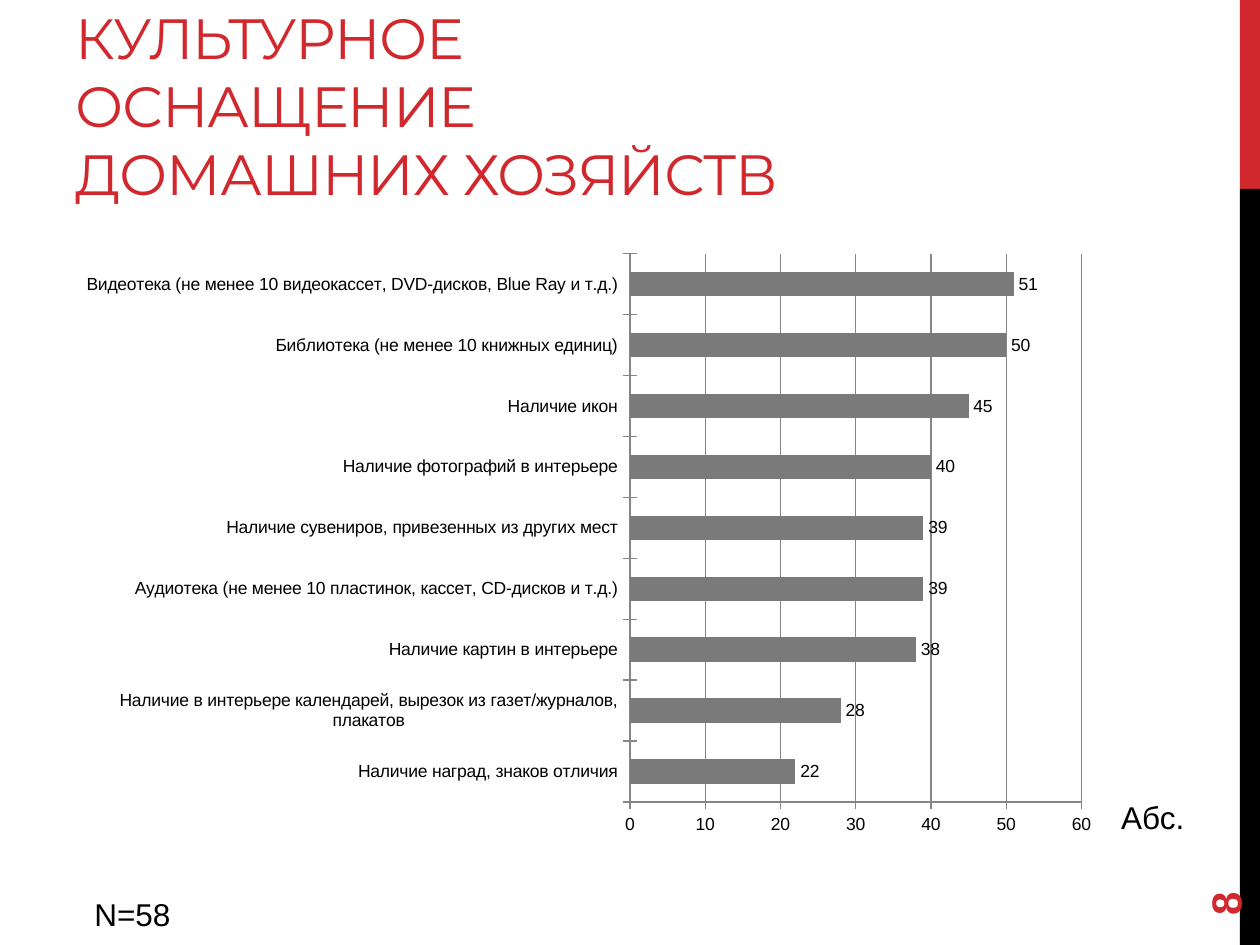
import dataclasses

import lxml.etree
import pptx
import pptx.chart.data
import pptx.dml.color
import pptx.enum.chart
import pptx.enum.shapes
import pptx.enum.text
import pptx.oxml.ns
import pptx.util

Pt = pptx.util.Pt
RGBColor = pptx.dml.color.RGBColor
Anchor = pptx.enum.text.MSO_ANCHOR

RED = RGBColor(0xD1, 0x28, 0x2E)
BLACK = RGBColor(0, 0, 0)
BAR_GRAY = RGBColor(0x7A, 0x7A, 0x7A)
LINE_GRAY = RGBColor(0x86, 0x86, 0x86)

HOUSEHOLD_ITEMS = {
    "Наличие наград, знаков отличия": 22,
    "Наличие в интерьере календарей, вырезок из газет/журналов, плакатов": 28,
    "Наличие картин в интерьере": 38,
    "Аудиотека (не менее 10 пластинок, кассет, CD-дисков и т.д.)": 39,
    "Наличие сувениров, привезенных из других мест": 39,
    "Наличие фотографий в интерьере": 40,
    "Наличие икон": 45,
    "Библиотека (не менее 10 книжных единиц)": 50,
    "Видеотека (не менее 10 видеокассет, DVD-дисков, Blue Ray и т.д.)": 51,
}
# Inner plot area as fractions of the chart frame
PLOT_LAYOUT = {"x": 0.54, "y": 0.02, "w": 0.43, "h": 0.91}


@dataclasses.dataclass
class Band:
    top: float
    height: float
    color: RGBColor


@dataclasses.dataclass
class Label:
    text: str
    left: float
    top: float
    width: float
    size: float = 18
    color: RGBColor = BLACK
    bold: bool = False
    rotation: float = 0
    wrap: bool = False
    anchor: Anchor = Anchor.TOP


BANDS = [Band(0, 108, RED), Band(108, 432, BLACK)]
LABELS = [
    Label("8", 648, 463.7, 103.7, size=24, color=RED, bold=True,
          rotation=270, wrap=True, anchor=Anchor.MIDDLE),
    Label("N=58", 46.8, 507.6, 58.3),
    Label("Абс.", 633.6, 452.2, 51.8),
]


def apply_format(target, values: dict) -> None:
    for name, value in values.items():
        setattr(target, name, value)


def apply_font(font, color: RGBColor, **values) -> None:
    apply_format(font, values)
    font.color.rgb = color


def add_band(page, band: Band) -> None:
    shape = page.shapes.add_shape(
        pptx.enum.shapes.MSO_SHAPE.RECTANGLE,
        Pt(708.5), Pt(band.top), Pt(11.5), Pt(band.height))
    shape.shadow.inherit = False
    shape.fill.solid()
    shape.fill.fore_color.rgb = band.color
    shape.line.fill.background()


def add_label(page, label: Label) -> None:
    box = page.shapes.add_textbox(
        Pt(label.left), Pt(label.top), Pt(label.width), Pt(29))
    box.rotation = label.rotation
    apply_format(box.text_frame, {
        "word_wrap": label.wrap, "vertical_anchor": label.anchor})
    span = box.text_frame.paragraphs[0].add_run()
    span.text = label.text
    apply_font(span.font, label.color, name="Arial",
               size=Pt(label.size), bold=label.bold)


def format_title(page, text: str) -> None:
    title = page.shapes.title
    apply_format(title, {"left": Pt(36), "top": Pt(12.2),
                         "width": Pt(455.8), "height": Pt(108)})
    apply_format(title.text_frame, {
        "word_wrap": True, "vertical_anchor": Anchor.BOTTOM,
        "auto_size": pptx.enum.text.MSO_AUTO_SIZE.NONE,
        "margin_bottom": Pt(2)})
    para = title.text_frame.paragraphs[0]
    para.alignment = pptx.enum.text.PP_ALIGN.LEFT
    span = para.add_run()
    span.text = text
    apply_font(span.font, RED, name="Montserrat", size=Pt(32.4))
    span.font._element.set("spc", "-60")


def set_plot_layout(chart) -> None:
    plot_area = chart._chartSpace.chart.plotArea
    for old in plot_area.findall(pptx.oxml.ns.qn("c:layout")):
        plot_area.remove(old)
    layout = lxml.etree.Element(pptx.oxml.ns.qn("c:layout"))
    manual = lxml.etree.SubElement(layout, pptx.oxml.ns.qn("c:manualLayout"))
    settings = {"layoutTarget": "inner", "xMode": "edge", "yMode": "edge",
                **PLOT_LAYOUT}
    for name, value in settings.items():
        item = lxml.etree.SubElement(manual, pptx.oxml.ns.qn(f"c:{name}"))
        item.set("val", str(value))
    plot_area.insert(0, layout)


def format_line(line) -> None:
    line.color.rgb = LINE_GRAY
    line.width = Pt(0.75)


def add_household_chart(page) -> None:
    chart_data = pptx.chart.data.CategoryChartData()
    chart_data.categories = list(HOUSEHOLD_ITEMS)
    chart_data.add_series("Series 1", list(HOUSEHOLD_ITEMS.values()))
    chart = page.shapes.add_chart(
        pptx.enum.chart.XL_CHART_TYPE.BAR_CLUSTERED,
        Pt(36), Pt(138.2), Pt(600), Pt(344.2), chart_data).chart
    apply_format(chart, {"has_legend": False, "has_title": False})
    apply_font(chart.font, BLACK, name="Arial", size=Pt(10))
    set_plot_layout(chart)

    plot = chart.plots[0]
    apply_format(plot, {"gap_width": 150, "vary_by_categories": False,
                        "has_data_labels": True})
    apply_format(plot.data_labels, {
        "show_value": True,
        "position": pptx.enum.chart.XL_LABEL_POSITION.OUTSIDE_END})
    apply_font(plot.data_labels.font, BLACK, name="Arial", size=Pt(10))
    fill = plot.series[0].format.fill
    fill.solid()
    fill.fore_color.rgb = BAR_GRAY

    for axis in (chart.category_axis, chart.value_axis):
        axis.major_tick_mark = pptx.enum.chart.XL_TICK_MARK.CROSS
        format_line(axis.format.line)
        apply_font(axis.tick_labels.font, BLACK, name="Arial", size=Pt(10))
    apply_format(chart.value_axis, {
        "minimum_scale": 0, "maximum_scale": 60, "major_unit": 10,
        "has_major_gridlines": True})
    format_line(chart.value_axis.major_gridlines.format.line)


def main() -> None:
    deck = pptx.Presentation()
    apply_format(deck, {"slide_width": Pt(720), "slide_height": Pt(540)})
    page = deck.slides.add_slide(deck.slide_layouts[5])
    for band in BANDS:
        add_band(page, band)
    format_title(page, "КУЛЬТУРНОЕ ОСНАЩЕНИЕ ДОМАШНИХ ХОЗЯЙСТВ")
    add_household_chart(page)
    for label in LABELS:
        add_label(page, label)
    deck.save("out.pptx")


if __name__ == "__main__":
    main()
